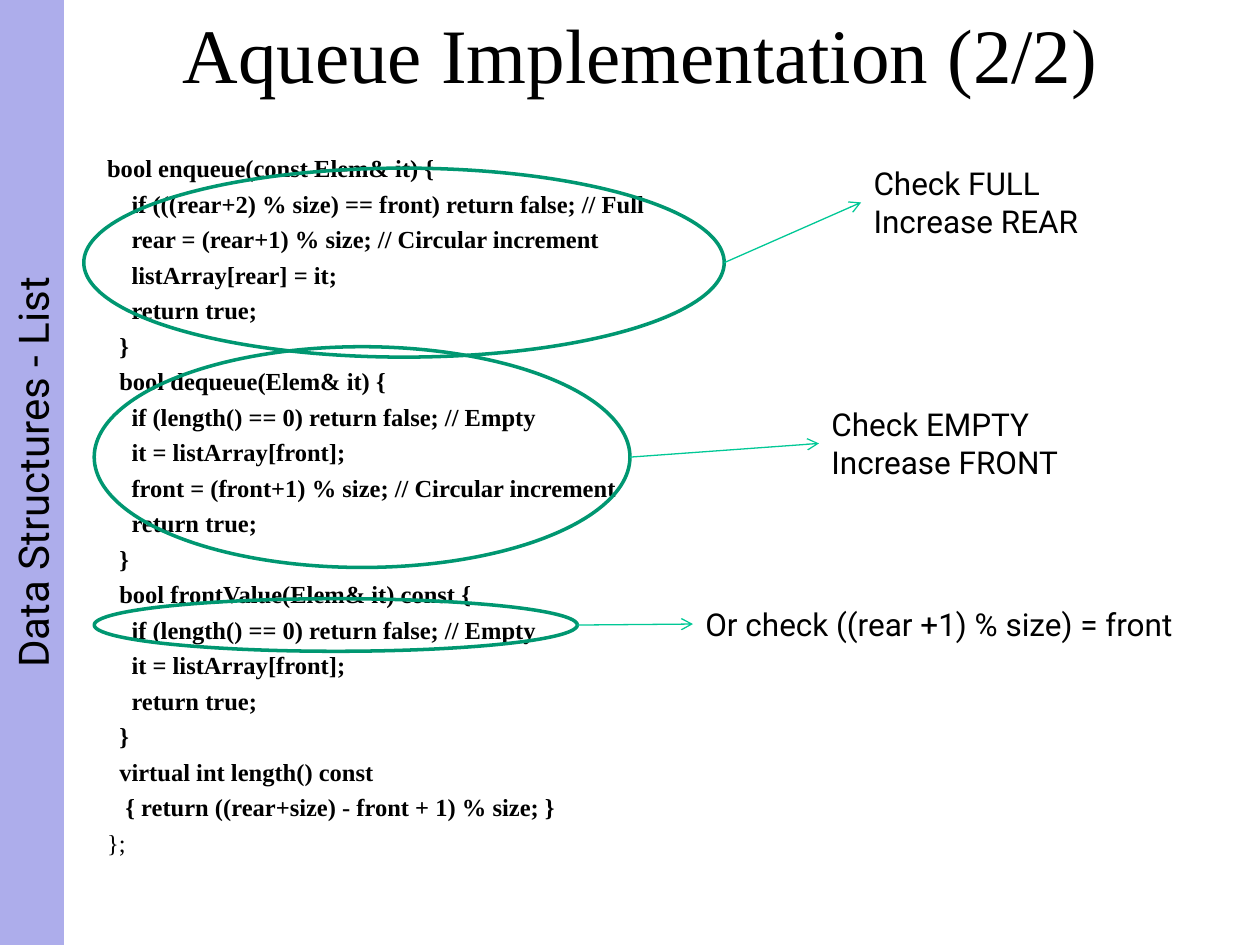
from lxml import etree
from pptx import Presentation
from pptx.dml.color import RGBColor
from pptx.enum.shapes import MSO_CONNECTOR, MSO_SHAPE
from pptx.enum.text import MSO_ANCHOR, MSO_AUTO_SIZE, PP_ALIGN
from pptx.oxml.ns import qn
from pptx.util import Cm, Pt

STRAIGHT = MSO_CONNECTOR.STRAIGHT
RECTANGLE, OVAL = MSO_SHAPE.RECTANGLE, MSO_SHAPE.OVAL
MIDDLE, TOP = MSO_ANCHOR.MIDDLE, MSO_ANCHOR.TOP
NO_FIT, GROW = MSO_AUTO_SIZE.NONE, MSO_AUTO_SIZE.SHAPE_TO_FIT_TEXT
CENTER, LEFT = PP_ALIGN.CENTER, PP_ALIGN.LEFT

BLACK = RGBColor(0x00, 0x00, 0x00)
LILAC = RGBColor(0xAD, 0xAD, 0xEB)
GREEN = RGBColor(0x00, 0x97, 0x71)
MINT = RGBColor(0x00, 0xC8, 0x96)

TITLE_FONT = {"name": "Times New Roman", "size": Pt(44), "bold": False}
CODE_FONT = {"name": "Times New Roman", "size": Pt(14), "bold": True}
SIDE_FONT = {"name": "Roboto", "size": Pt(24)}
NOTE_FONT = {"name": "Roboto", "size": Pt(18)}

PAGE_WIDTH, PAGE_HEIGHT = 25.4, 19.05
SPACE_WIDTH = 0.123  # one space of the code font, in cm

# Each code line: indent in spaces, wording
CODE = [
    (0, "bool enqueue(const Elem& it) {"),
    (4, "if (((rear+2) % size) == front) return false; // Full"),
    (4, "rear = (rear+1) % size; // Circular increment"),
    (4, "listArray[rear] = it;"),
    (4, "return true;"),
    (2, "}"),
    (2, "bool dequeue(Elem& it) {"),
    (4, "if (length() == 0) return false; // Empty"),
    (4, "it = listArray[front];"),
    (4, "front = (front+1) % size; // Circular increment"),
    (4, "return true;"),
    (2, "}"),
    (2, "bool frontValue(Elem& it) const {"),
    (4, "if (length() == 0) return false; // Empty"),
    (4, "it = listArray[front];"),
    (4, "return true;"),
    (2, "}"),
    (2, "virtual int length() const"),
    (3, "{ return ((rear+size) - front + 1) % size; }"),
    (0, "};"),
]

# Each callout: ellipse box, note box (left, top, width, height in cm), note lines
CALLOUTS = [
    ((1.69, 3.39, 12.91, 3.81), (17.36, 3.18, 4.93, 1.8),
     ["Check FULL", "Increase REAR"]),
    ((1.9, 12.07, 9.74, 1.06), (13.97, 12.07, 10.24, 1.02),
     ["Or check ((rear +1) % size) = front"]),
    ((1.9, 6.99, 10.8, 4.45), (16.51, 8.04, 5.36, 1.8),
     ["Check EMPTY", "Increase FRONT"]),
]


def lengths(box):
    return [Cm(value) for value in box]


def write(frame, lines, font, align=LEFT):
    """Fill a text frame with one formatted paragraph per line."""
    for number, line in enumerate(lines):
        para = frame.paragraphs[0] if number == 0 else frame.add_paragraph()
        para.alignment = align
        span = para.add_run()
        span.text = line
        for name, value in font.items():
            setattr(span.font, name, value)
        span.font.color.rgb = BLACK


def add_side_bar(page, box):
    """Upright band; the shape is laid flat around the box centre, then turned."""
    left, top, width, height = box
    middle_x, middle_y = left + width / 2, top + height / 2
    flat = (middle_x - height / 2, middle_y - width / 2, height, width)
    bar = page.shapes.add_shape(RECTANGLE, *lengths(flat))
    bar.rotation = 270
    bar.shadow.inherit = False
    bar.fill.solid()
    bar.fill.fore_color.rgb = LILAC
    bar.line.fill.background()
    bar.text_frame.vertical_anchor = MIDDLE
    write(bar.text_frame, ["Data Structures - List"], SIDE_FONT, CENTER)


def set_title(page, box):
    title = page.shapes.title
    title.left, title.top, title.width, title.height = lengths(box)
    frame = title.text_frame
    frame.auto_size = NO_FIT
    frame.vertical_anchor = MIDDLE
    write(frame, ["Aqueue Implementation (2/2)"], TITLE_FONT, CENTER)


def add_code(page, box):
    frame = page.shapes.add_textbox(*lengths(box)).text_frame
    frame.word_wrap = True
    frame.vertical_anchor = TOP
    write(frame, [line for _, line in CODE], CODE_FONT)
    for para, (spaces, _) in zip(frame.paragraphs, CODE):
        para.space_before = Pt(3.5)
        para._p.get_or_add_pPr().set("marL", str(Cm(spaces * SPACE_WIDTH)))
    frame.paragraphs[-1].runs[0].font.bold = False


def add_callout(page, ring_box, note_box, lines):
    """Ellipse around code, a note beside it and an arrow between them."""
    ring = page.shapes.add_shape(OVAL, *lengths(ring_box))
    ring.shadow.inherit = False
    ring.fill.background()
    ring.line.color.rgb = GREEN
    ring.line.width = Pt(2)

    note = page.shapes.add_textbox(*lengths(note_box))
    note.text_frame.word_wrap = False
    note.text_frame.auto_size = GROW
    write(note.text_frame, lines, NOTE_FONT)

    arrow = page.shapes.add_connector(
        STRAIGHT, ring.left + ring.width, ring.top + ring.height // 2,
        note.left, note.top + note.height // 2)
    arrow.end_connect(note, 1)
    arrow.line.color.rgb = MINT
    arrow.line.width = Pt(0.75)
    etree.SubElement(arrow.line._get_or_add_ln(), qn("a:tailEnd"), type="arrow")
    etree.SubElement(arrow._element.spPr, qn("a:effectLst"))


def main():
    deck = Presentation()
    deck.slide_width, deck.slide_height = Cm(PAGE_WIDTH), Cm(PAGE_HEIGHT)
    page = deck.slides.add_slide(deck.slide_layouts[5])
    add_side_bar(page, (0, 0, 1.29, PAGE_HEIGHT))
    set_title(page, (2.12, 0.64, 21.59, 0.85))
    add_code(page, (1.91, 2.96, 21.59, 11.43))
    for ring_box, note_box, lines in CALLOUTS:
        add_callout(page, ring_box, note_box, lines)
    deck.save("out.pptx")


if __name__ == "__main__":
    main()
